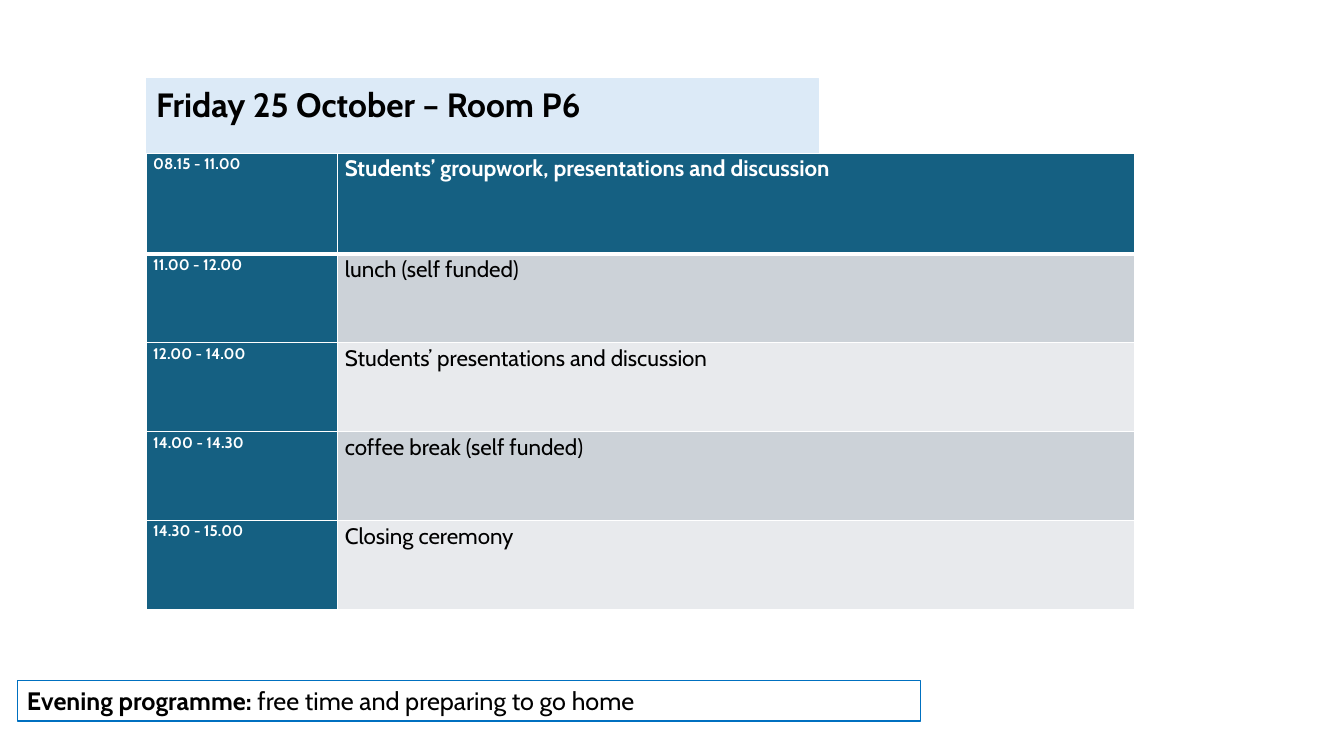
from dataclasses import dataclass

from lxml.etree import SubElement
from pptx import Presentation
from pptx.dml.color import RGBColor
from pptx.enum.shapes import MSO_SHAPE
from pptx.enum.text import MSO_ANCHOR, MSO_AUTO_SIZE, PP_ALIGN
from pptx.oxml.ns import qn
from pptx.util import Cm, Pt


@dataclass(frozen=True)
class Theme:
    """Colours and type sizes of the programme slide."""
    font: str = "Cabin"
    white: str = "FFFFFF"
    black: str = "000000"
    header: str = "156082"
    bands: tuple = ("CCD2D8", "E8EAED")
    heading_fill: str = "DCEAF7"
    evening_line: str = "0070C0"
    heading_size: int = 24
    evening_size: int = 18
    activity_size: int = 16
    time_size: int = 11


THEME = Theme()

SESSIONS = [
    ("08.15 - 11.00", "Students’ groupwork, presentations and discussion"),
    ("11.00 - 12.00", "lunch (self funded)"),
    ("12.00 - 14.00", "Students’ presentations and discussion"),
    ("14.00 - 14.30", "coffee break (self funded)"),
    ("14.30 - 15.00", "Closing ceremony"),
]


def apply_format(target, values):
    """Set every attribute named in values on target."""
    for name, value in values.items():
        setattr(target, name, value)


def paint(fill, colour):
    """Give a fill one solid colour."""
    fill.solid()
    fill.fore_color.rgb = RGBColor.from_string(colour)


def write(paragraph, text, size, colour, bold):
    """Append one formatted run to a paragraph."""
    run = paragraph.add_run()
    run.text = text
    apply_format(run.font, {"name": THEME.font, "size": Pt(size), "bold": bold})
    run.font.color.rgb = RGBColor.from_string(colour)


def fill_label(label, parts, size, line):
    """Outline a one-line label and write its (text, bold) parts."""
    paint(label.line.fill, line)
    label.line.width = Pt(0.75)
    apply_format(label.text_frame, {
        "word_wrap": True,
        "auto_size": MSO_AUTO_SIZE.SHAPE_TO_FIT_TEXT,
        "vertical_anchor": MSO_ANCHOR.TOP,
    })
    paragraph = label.text_frame.paragraphs[0]
    paragraph.alignment = PP_ALIGN.LEFT
    for text, bold in parts:
        write(paragraph, text, size, THEME.black, bold)


def add_heading(slide):
    """Place the day and room in the title placeholder."""
    heading = slide.shapes.title
    apply_format(heading, {"left": Cm(3.68), "top": Cm(1.98),
                           "width": Cm(16.94), "height": Cm(1.27)})
    paint(heading.fill, THEME.heading_fill)
    fill_label(heading, [("Friday 25 October – Room P6", True)],
               THEME.heading_size, THEME.heading_fill)


def add_evening(slide):
    """Add the outlined evening programme line."""
    evening = slide.shapes.add_shape(
        MSO_SHAPE.RECTANGLE, Cm(0.43), Cm(17.15), Cm(22.78), Cm(1.02))
    evening.shadow.inherit = False
    evening.fill.background()
    fill_label(evening, [("Evening programme: ", True),
                         ("free time and preparing to go home", False)],
               THEME.evening_size, THEME.evening_line)


def set_borders(cell, widths):
    """Draw white borders with a width in points for each side."""
    properties = cell._tc.get_or_add_tcPr()
    for side, width in widths.items():
        border = SubElement(properties, qn(f"a:ln{side}"), w=str(Pt(width)))
        solid = SubElement(border, qn("a:solidFill"))
        SubElement(solid, qn("a:srgbClr"), val=THEME.white)


def fill_cell(cell, text, size, colour, bold, background, borders):
    """Write and format one programme cell."""
    apply_format(cell, {"margin_left": Cm(0.18), "margin_right": Cm(0.18),
                        "margin_top": 0, "margin_bottom": 0,
                        "vertical_anchor": MSO_ANCHOR.TOP})
    set_borders(cell, borders)
    paint(cell.fill, background)
    paragraph = cell.text_frame.paragraphs[0]
    apply_format(paragraph, {"line_spacing": 1.07, "space_after": Pt(8)})
    write(paragraph, text, size, colour, bold)


def add_programme(slide):
    """Add the table of session times and activities."""
    programme = slide.shapes.add_table(
        len(SESSIONS), 2, Cm(3.68), Cm(3.86), Cm(24.92), Cm(11.5)).table
    for column, width in zip(programme.columns, (4.83, 20.09)):
        column.width = Cm(width)
    for index, (time, activity) in enumerate(SESSIONS):
        first = index == 0
        programme.rows[index].height = Cm(2.54 if first else 2.24)
        borders = {"L": 1, "R": 1, "T": 3 if index == 1 else 1,
                   "B": 3 if first else 1}
        fill_cell(programme.cell(index, 0), time, THEME.time_size,
                  THEME.white, True, THEME.header, borders)
        fill_cell(programme.cell(index, 1), activity, THEME.activity_size,
                  THEME.white if first else THEME.black, first,
                  THEME.header if first else THEME.bands[(index - 1) % 2],
                  borders)


def main():
    """Build and save the Friday programme slide."""
    presentation = Presentation()
    apply_format(presentation, {"slide_width": Cm(33.87),
                                "slide_height": Cm(19.05)})
    slide = presentation.slides.add_slide(presentation.slide_layouts[5])
    add_programme(slide)
    add_heading(slide)
    add_evening(slide)
    presentation.save("out.pptx")


if __name__ == "__main__":
    main()
